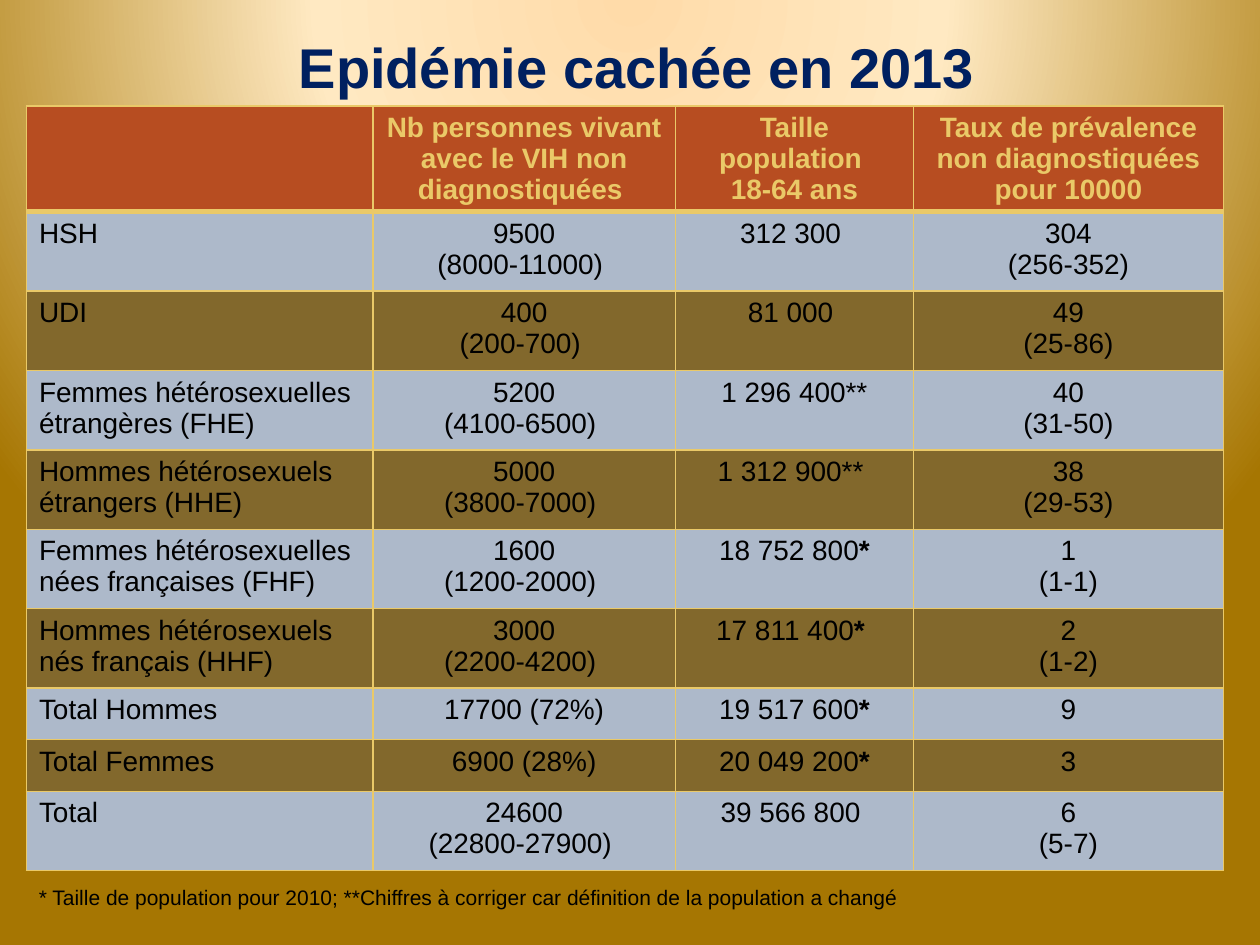
from lxml import etree
from pptx import Presentation
from pptx.dml.color import RGBColor
from pptx.enum.text import MSO_ANCHOR, PP_ALIGN
from pptx.oxml import parse_xml
from pptx.oxml.ns import qn
from pptx.util import Inches, Pt

CENTER, LEFT = PP_ALIGN.CENTER, PP_ALIGN.LEFT
MIDDLE = MSO_ANCHOR.MIDDLE
NAVY = RGBColor(0x00, 0x20, 0x60)
GOLD = RGBColor(0xEA, 0xC9, 0x68)
RUST = RGBColor(0xB7, 0x4D, 0x21)
BLUE_GREY = RGBColor(0xAD, 0xB9, 0xCA)
BROWN = RGBColor(0x82, 0x68, 0x2C)
BLACK = RGBColor(0x00, 0x00, 0x00)
PEACH = RGBColor(0xFF, 0xDB, 0xA9)
CREAM = RGBColor(0xFF, 0xE9, 0xC2)
OCHRE = RGBColor(0xA6, 0x76, 0x02)
FONT = "Arial"
TITLE = "Epidémie cachée en 2013"
FOOTNOTE = ("* Taille de population pour 2010; **Chiffres à corriger car "
            "définition de la population a changé")
COLUMN_WIDTHS = [2.75, 2.4, 1.89, 2.46]
HEADER_HEIGHT, TALL_ROW, SHORT_ROW = 0.83, 0.63, 0.41
ROWS = [
    ["", "Nb personnes vivant avec le VIH non diagnostiquées ",
     "Taille population \n18-64 ans", "Taux de prévalence non diagnostiquées\npour 10000"],
    ["HSH", "9500\n(8000-11000) ", "312 300 ", "304\n(256-352)"],
    ["UDI", "400\n(200-700) ", "81 000 ", "49\n(25-86)"],
    ["Femmes hétérosexuelles étrangères (FHE)", "5200\n(4100-6500) ",
     "1 296 400**", "40\n(31-50)"],
    ["Hommes hétérosexuels étrangers (HHE)", "5000\n(3800-7000) ",
     "1 312 900** ", "38\n(29-53)"],
    ["Femmes hétérosexuelles nées françaises (FHF)", "1600\n(1200-2000) ",
     "18 752 800*", "1\n(1-1)"],
    ["Hommes hétérosexuels nés français (HHF)", "3000\n(2200-4200) ",
     "17 811 400* ", "2\n(1-2)"],
    ["Total Hommes", "17700 (72%)", "19 517 600*", "9"],
    ["Total Femmes", "6900 (28%)", "20 049 200*", "3"],
    ["Total", "24600\n(22800-27900) ", "39 566 800 ", "6\n(5-7)"],
]


def set_font(paragraph, size, color, bold=False):
    """Format a whole paragraph."""
    font = paragraph.font
    font.name, font.size, font.bold = FONT, Pt(size), bold
    font.color.rgb = color


def paint_background(slide):
    """Fill the slide with a radial gradient centred near its top."""
    stops = "".join(
        f'<a:gs pos="{position * 1000}"><a:srgbClr val="{color}"/></a:gs>'
        for position, color in [(0, PEACH), (40, CREAM), (100, OCHRE)])
    gradient = parse_xml(
        '<a:gradFill xmlns:a="http://schemas.openxmlformats.org/drawingml/2006/main" '
        f'rotWithShape="1"><a:gsLst>{stops}</a:gsLst><a:path path="circle">'
        '<a:fillToRect l="50000" t="-80000" r="50000" b="180000"/></a:path></a:gradFill>')
    fill = slide.background.fill
    fill.solid()
    solid = slide.element.find(".//" + qn("a:solidFill"))
    solid.getparent().replace(solid, gradient)


def place_title(slide, left, top, width, height):
    """Position and format the title placeholder."""
    title = slide.shapes.title
    title.left, title.top, title.width, title.height = left, top, width, height
    title.text_frame.text = TITLE
    title.text_frame.vertical_anchor = MIDDLE
    paragraph = title.text_frame.paragraphs[0]
    paragraph.alignment = CENTER
    set_font(paragraph, 32, NAVY, True)


def set_borders(cell, top, bottom):
    """Draw gold cell borders with the given top and bottom widths."""
    properties = cell._tc.get_or_add_tcPr()
    widths = {"lnL": 1, "lnR": 1, "lnT": top, "lnB": bottom}
    for index, (side, width) in enumerate(widths.items()):
        line = etree.Element(qn(f"a:{side}"), w=str(Pt(width)))
        solid = etree.SubElement(line, qn("a:solidFill"))
        etree.SubElement(solid, qn("a:srgbClr"), val=str(GOLD))
        properties.insert(index, line)


def write_cell(cell, text, alignment, color, bold):
    """Write lines into a cell, with a single trailing asterisk in bold."""
    frame = cell.text_frame
    for index, line in enumerate(text.split("\n")):
        paragraph = frame.add_paragraph() if index else frame.paragraphs[0]
        paragraph.alignment = alignment
        set_font(paragraph, 16, color, bold)
        number, mark, rest = line.partition("*")
        if mark and not rest.startswith("*"):
            paragraph.add_run().text = number
            star = paragraph.add_run()
            star.text = mark + rest
            star.font.bold = True
        elif line:
            paragraph.add_run().text = line


def add_prevalence_table(slide, left, top, width, height):
    """Add the table of undiagnosed people by group."""
    table = slide.shapes.add_table(
        len(ROWS), len(COLUMN_WIDTHS), left, top, width, height).table
    for column, column_width in zip(table.columns, COLUMN_WIDTHS):
        column.width = Inches(column_width)
    for row_index, texts in enumerate(ROWS):
        header = row_index == 0
        two_lines = any("\n" in text for text in texts)
        row_height = HEADER_HEIGHT if header else TALL_ROW if two_lines else SHORT_ROW
        table.rows[row_index].height = Inches(row_height)
        fill_color = RUST if header else BLUE_GREY if row_index % 2 else BROWN
        for column_index, text in enumerate(texts):
            cell = table.cell(row_index, column_index)
            cell.fill.solid()
            cell.fill.fore_color.rgb = fill_color
            set_borders(cell, 3 if row_index == 1 else 1, 3 if header else 1)
            write_cell(cell, text, CENTER if column_index else LEFT,
                       GOLD if header else BLACK, header)


def add_footnote(slide, left, top, width, height):
    """Add the note that explains the asterisks."""
    frame = slide.shapes.add_textbox(left, top, width, height).text_frame
    frame.word_wrap = True
    frame.text = FOOTNOTE
    set_font(frame.paragraphs[0], 12, BLACK)


def main():
    """Build and save the slide."""
    presentation = Presentation()
    presentation.slide_width, presentation.slide_height = Inches(10), Inches(7.5)
    slide = presentation.slides.add_slide(presentation.slide_layouts.get_by_name("Title Only"))
    left = Inches(0.21)
    paint_background(slide)
    place_title(slide, left, Inches(0.04), Inches(9.69), Inches(0.97))
    add_prevalence_table(slide, left, Inches(0.84), Inches(9.5), Inches(6.15))
    add_footnote(slide, left, Inches(6.97), Inches(7.02), Inches(0.3))
    presentation.save("out.pptx")


if __name__ == "__main__":
    main()
